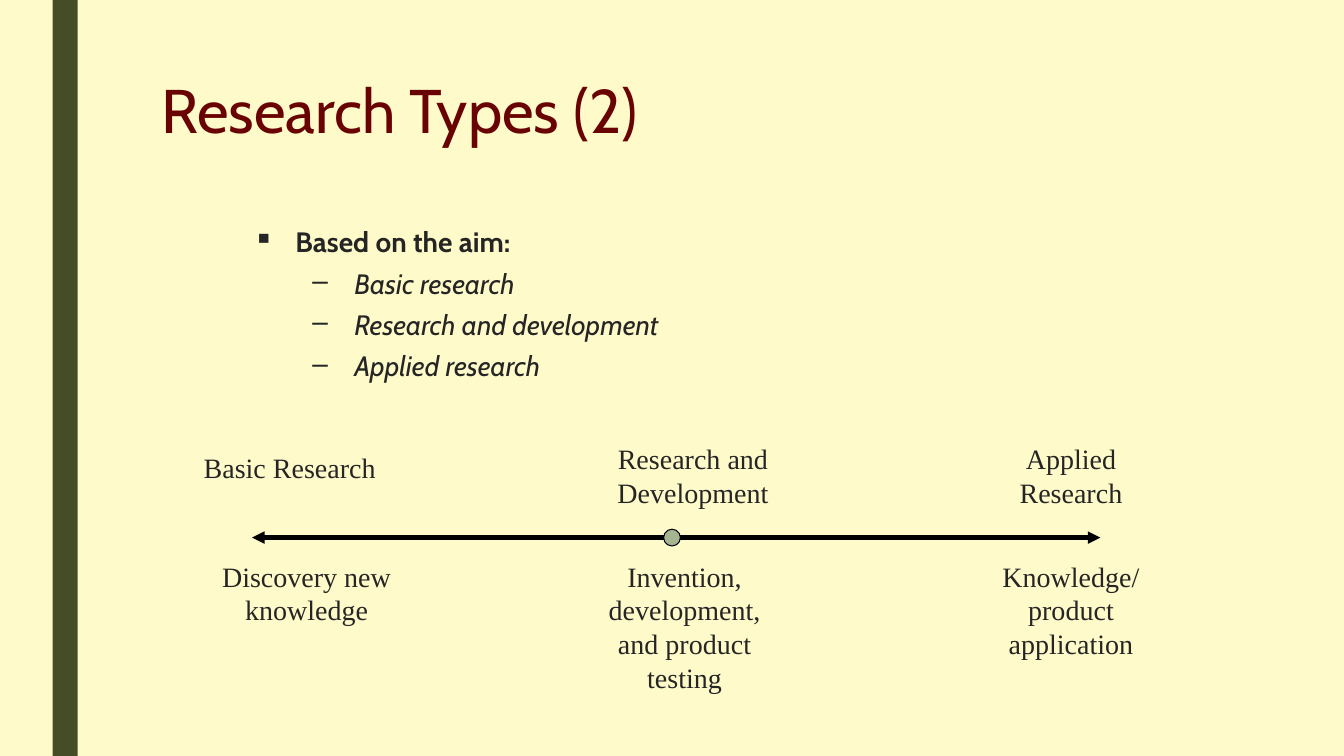
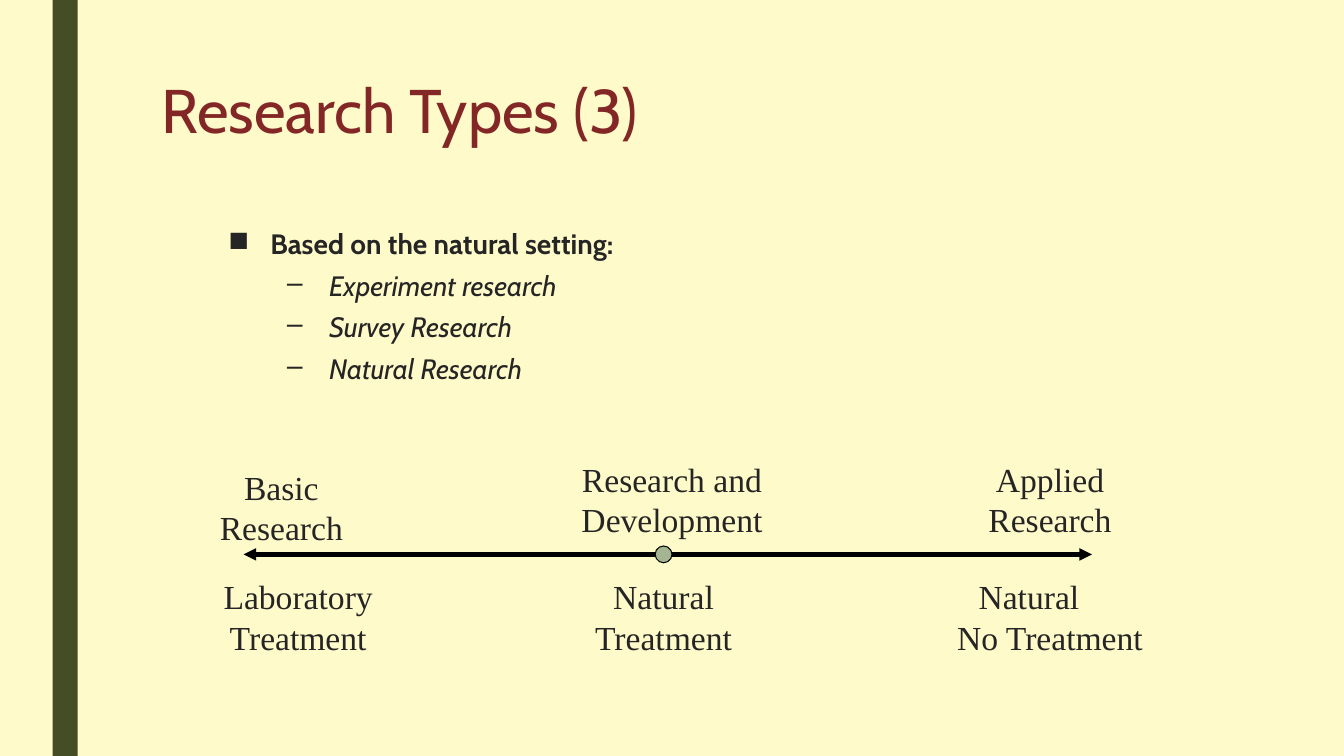
import pptx
import pptx.util
import pptx.dml.color
import pptx.enum.shapes
import pptx.enum.text
import pptx.oxml.ns
import lxml.etree

Pt = pptx.util.Pt
qn = pptx.oxml.ns.qn
SHAPE = pptx.enum.shapes.MSO_SHAPE
CENTER = pptx.enum.text.PP_ALIGN.CENTER

# Shared look
PAPER, BAND, INK, DOT, BLACK = "FEFAC9", "444D26", "262525", "A5B592", "000000"
TITLE = dict(name="Cabin", size=Pt(44))
HEADING = dict(name="Cabin", size=Pt(20), bold=True)
ITEM = dict(name="Cabin", size=Pt(20), italic=True)
AXIS_LENGTH, DOT_SIZE, LABEL_WIDTH = 606, 12, 150

# Label offsets from the left end of the axis; the last two columns can shift
LABEL_OFFSETS = [(-48, -66), (240, -72), (510, -72), (-36, 12), (234, 12), (510, 12)]

SLIDES = [
    dict(title="Research Types (2)", title_color="690202", body=(174, 159), bullet="▪",
         lines=["Based on the aim:", "Basic research", "Research and development",
                "Applied research"],
         axis=(180, 384), shift=0, label_size=20,
         labels=["Basic Research", "Research and Development", "Applied Research",
                 "Discovery new knowledge", "Invention, development, and product testing",
                 "Knowledge/ product application"]),
    dict(title="Research Types (3)", title_color="822626", body=(156, 160.5), bullet="■",
         lines=["Based on the natural setting:", "Experiment research", "Survey Research",
                "Natural Research"],
         axis=(174, 396), shift=-9, label_size=24,
         labels=["Basic Research", "Research and Development", "Applied Research",
                 "Laboratory Treatment", "Natural Treatment", "Natural\nNo Treatment"]),
]


def paint(color_format, hex_color):
    color_format.rgb = pptx.dml.color.RGBColor.from_string(hex_color)


def add_text(s, box, lines, color, formats):
    """Add a text box with one paragraph per line; return its paragraphs."""
    tf = s.shapes.add_textbox(*map(Pt, box)).text_frame
    tf.word_wrap = True
    for i, (line, fmt) in enumerate(zip(lines, formats)):
        p = tf.add_paragraph() if i else tf.paragraphs[0]
        r = p.add_run()
        r.text = line
        paint(r.font.color, color)
        for key, value in fmt.items():
            setattr(r.font, key, value)
    return tf.paragraphs


prs = pptx.Presentation()
prs.slide_width, prs.slide_height = Pt(960), Pt(540)
background = prs.slide_master.background.fill
background.solid()
paint(background.fore_color, PAPER)

for data in SLIDES:
    s = prs.slides.add_slide(prs.slide_layouts[6])

    # Side band
    sp = s.shapes.add_shape(SHAPE.RECTANGLE, Pt(37.5), 0, Pt(18), prs.slide_height)
    sp.shadow.inherit = False
    sp.fill.solid()
    paint(sp.fill.fore_color, BAND)
    sp.line.fill.background()

    # Title
    p = add_text(s, (108, 54, 756, 116), [data["title"]], data["title_color"], [TITLE])[0]
    p.line_spacing = 0.89

    # Bulleted list: a heading and its items
    paragraphs = add_text(s, (*data["body"], 648, 124), data["lines"], INK,
                          [HEADING] + [ITEM] * 3)
    for i, p in enumerate(paragraphs):
        p.line_spacing, p.space_after = 0.94, Pt(2)
        p.space_before = Pt(5 if i else 0)
        p.level = 1 if i else 0
        pPr = p._p.get_or_add_pPr()
        pPr.set("marL", str(Pt(72 if i else 30)))
        pPr.set("indent", str(Pt(-30)))
        bullet = lxml.etree.SubElement(pPr, qn("a:buChar"))
        bullet.set("char", "–" if i else data["bullet"])

    # Axis with an arrowhead at each end
    x, y = data["axis"]
    axis = s.shapes.add_connector(pptx.enum.shapes.MSO_CONNECTOR.STRAIGHT,
                                  Pt(x), Pt(y), Pt(x + AXIS_LENGTH), Pt(y))
    paint(axis.line.color, BLACK)
    axis.line.width = Pt(3)
    for tag in ("a:headEnd", "a:tailEnd"):
        lxml.etree.SubElement(axis.line._get_or_add_ln(), qn(tag)).set("type", "triangle")
    lxml.etree.SubElement(axis._element.spPr, qn("a:effectLst"))

    # Dot on the axis
    sp = s.shapes.add_shape(SHAPE.OVAL, Pt(x + 294), Pt(y - DOT_SIZE / 2),
                            Pt(DOT_SIZE), Pt(DOT_SIZE))
    sp.shadow.inherit = False
    sp.fill.solid()
    paint(sp.fill.fore_color, DOT)
    paint(sp.line.color, BLACK)
    sp.line.width = Pt(0.75)

    # Labels above and below the axis
    label_format = dict(name="Times New Roman", size=Pt(data["label_size"]))
    for i, (text, (dx, dy)) in enumerate(zip(data["labels"], LABEL_OFFSETS)):
        lines = text.split("\n")
        outdent = 30 * (len(lines) - 1)
        left = x + dx + (data["shift"] if i % 3 else 0) - outdent
        box = (left, y + dy, LABEL_WIDTH + outdent, 56)
        for n, p in enumerate(add_text(s, box, lines, INK, [label_format] * len(lines))):
            p.alignment = CENTER
            if n:
                p._p.get_or_add_pPr().set("marL", str(Pt(outdent)))

prs.save("out.pptx")
